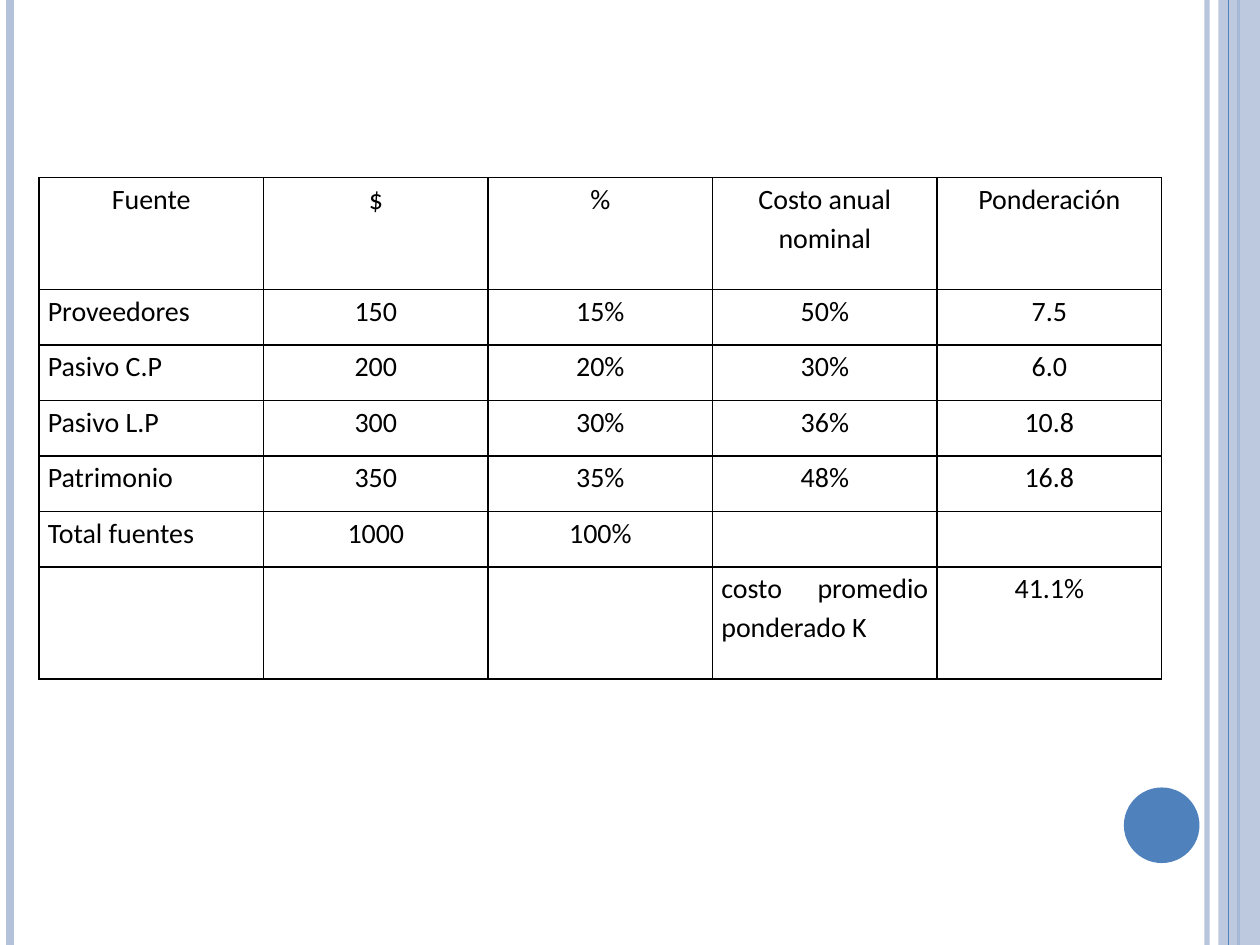
from pptx import Presentation
from pptx.dml.color import RGBColor
from pptx.enum.shapes import MSO_CONNECTOR, MSO_SHAPE
from pptx.enum.text import PP_ALIGN
from pptx.oxml.ns import qn
from pptx.util import Inches, Pt
from lxml.etree import SubElement

COLORS = {"pale": "B3C1DB", "blue": "4F81BD", "black": "000000"}
FONT = "Calibri"
ROWS = [
    ["Fuente", "$", "%", "Costo anual nominal", "Ponderación"],
    ["Proveedores", "150", "15%", "50%", "7.5"],
    ["Pasivo C.P", "200", "20%", "30%", "6.0"],
    ["Pasivo L.P", "300", "30%", "36%", "10.8"],
    ["Patrimonio ", "350", "35%", "48%", "16.8"],
    ["Total fuentes", "1000", "100%", "", ""],
    ["", "", "", "costo promedio ponderado K ", "41.1%"],
]
ROW_HEIGHTS = [0.89] + [0.44] * 5 + [0.89]


def rgb(name):
    return RGBColor.from_string(COLORS[name])


def set_alpha(parent, percent):
    color = parent.find(".//" + qn("a:srgbClr"))
    SubElement(color, qn("a:alpha"), val=str(percent * 1000))


def add_rule(s, x, top, height, color, width, alpha=None):
    line = s.shapes.add_connector(MSO_CONNECTOR.STRAIGHT, Inches(x), Inches(top),
                                  Inches(x), Inches(top + height))
    line.line.color.rgb = rgb(color)
    line.line.width = Pt(width)
    if alpha:
        set_alpha(line.line._ln, alpha)
    SubElement(line._element.spPr, qn("a:effectLst"))


def add_plain_shape(s, kind, left, top, width, height, color, alpha=None):
    sp = s.shapes.add_shape(kind, Inches(left), Inches(top), Inches(width), Inches(height))
    sp.shadow.inherit = False
    sp.fill.solid()
    sp.fill.fore_color.rgb = rgb(color)
    sp.line.fill.background()
    if alpha:
        set_alpha(sp._element.spPr, alpha)


def add_frame(s, left, top, width, height):
    """Vertical rules at both edges, the right band and the page disc."""
    right = left + width
    add_rule(s, right - 0.42, top, height, "pale", 3, alpha=93)
    add_rule(s, left + 0.08, top, height, "pale", 4.5)
    add_rule(s, right - 0.17, top, height, "blue", 1.5)
    add_plain_shape(s, MSO_SHAPE.RECTANGLE, right - 0.33, top, 0.33, height, "pale", alpha=87)
    add_rule(s, right - 0.25, top, height, "blue", 0.75)
    add_plain_shape(s, MSO_SHAPE.OVAL, right - 1.08, top + height - 1.25, 0.6, 0.6, "blue")


def set_borders(cell):
    tcPr = cell._tc.get_or_add_tcPr()
    for i, side in enumerate(("a:lnL", "a:lnR", "a:lnT", "a:lnB")):
        ln = SubElement(tcPr, qn(side), w=str(Pt(1)))
        tcPr.insert(i, ln)
        fill = SubElement(ln, qn("a:solidFill"))
        SubElement(fill, qn("a:srgbClr"), val=COLORS["black"])


def fill_cell(cell, text, align):
    cell.margin_left = cell.margin_right = Inches(0.07)
    cell.margin_top = cell.margin_bottom = 0
    cell.fill.background()
    set_borders(cell)
    if not text:
        return
    p = cell.text_frame.paragraphs[0]
    p.alignment = align
    p.line_spacing = 1.15
    r = p.add_run()
    r.text = text
    r.font.name = FONT
    r.font.size = Pt(16)
    r.font.bold = False
    r.font.color.rgb = rgb("black")


def add_cost_table(s, left, top, width, height):
    """Sources of funds with their weighted cost."""
    n_cols = len(ROWS[0])
    table = s.shapes.add_table(len(ROWS), n_cols, Inches(left), Inches(top),
                               Inches(width), Inches(height)).table
    table.first_row = table.horz_banding = False
    for col in table.columns:
        col.width = Inches(width / n_cols)
    for i, row in enumerate(ROWS):
        table.rows[i].height = Inches(height * ROW_HEIGHTS[i] / sum(ROW_HEIGHTS))
        for j, text in enumerate(row):
            # Row labels and the final caption are justified
            is_label = (j == 0 and i > 0) or (i == len(ROWS) - 1 and j == 3)
            align = PP_ALIGN.JUSTIFY if is_label else PP_ALIGN.CENTER
            fill_cell(table.cell(i, j), text, align)


def main():
    prs = Presentation()
    prs.slide_width, prs.slide_height = Inches(10), Inches(7.5)
    s = prs.slides.add_slide(prs.slide_layouts[6])
    add_frame(s, 0, 0, 10, 7.5)
    add_cost_table(s, 0.31, 1.41, 8.91, 3.98)
    prs.save("out.pptx")


if __name__ == "__main__":
    main()
